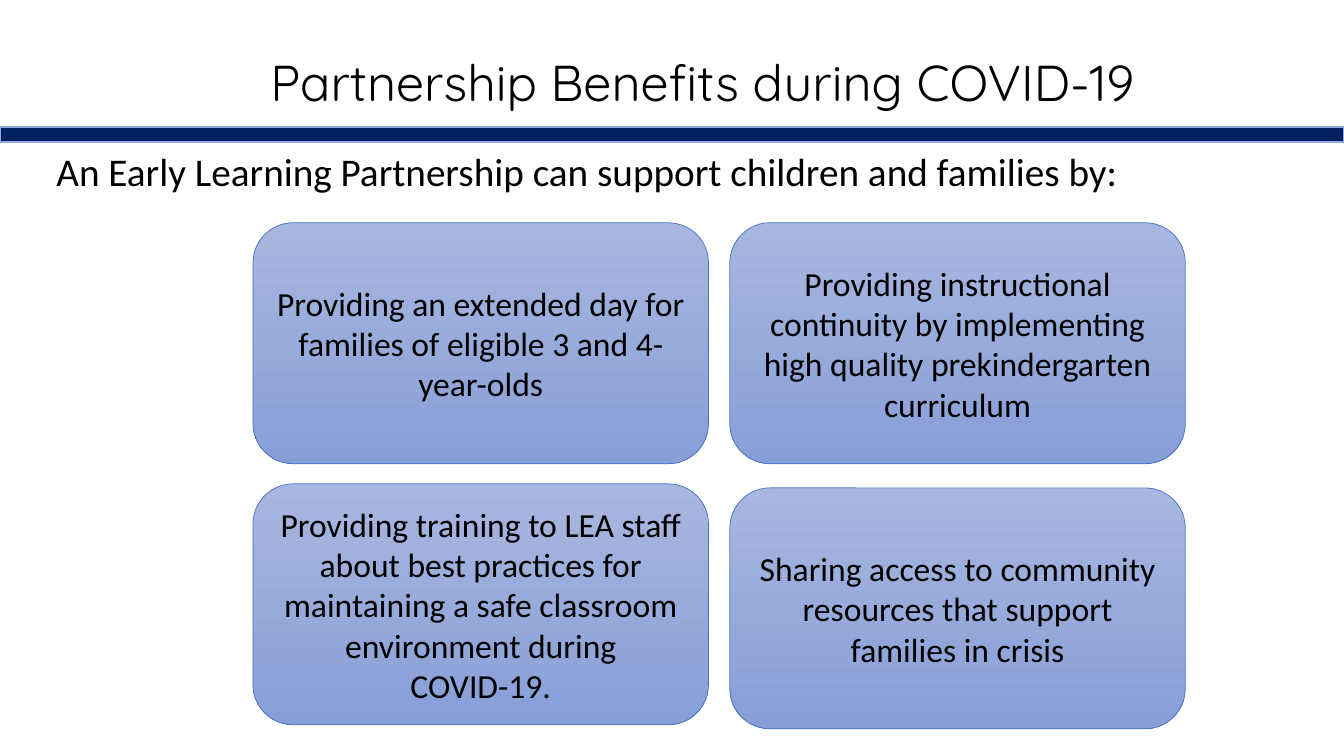
"""Build the slide on partnership benefits during COVID-19."""
import pptx
import pptx.dml.color
import pptx.enum.shapes
import pptx.enum.text
import pptx.util
from pptx.util import Pt

ALIGN = pptx.enum.text.PP_ALIGN
ANCHOR = pptx.enum.text.MSO_ANCHOR
SHAPES = pptx.enum.shapes.MSO_SHAPE


def color(hex_string):
    return pptx.dml.color.RGBColor.from_string(hex_string)


def write(shape, text, font_name, size, alignment, anchor):
    frame = shape.text_frame
    frame.word_wrap = True
    frame.auto_size = pptx.enum.text.MSO_AUTO_SIZE.NONE
    frame.vertical_anchor = anchor
    paragraph = frame.paragraphs[0]
    paragraph.text = text
    paragraph.alignment = alignment
    paragraph.font.name = font_name
    paragraph.font.size = Pt(size)
    paragraph.font.color.rgb = color("000000")
    return paragraph


presentation = pptx.Presentation()
presentation.slide_width = Pt(960)
presentation.slide_height = Pt(540)
slide = presentation.slides.add_slide(presentation.slide_layouts[1])

title = slide.shapes.title
title.left, title.top, title.width, title.height = Pt(87.8), Pt(8.6), Pt(828), Pt(104.4)
paragraph = write(title, "Partnership Benefits during COVID-19", "Quicksand", 36,
                  ALIGN.CENTER, ANCHOR.MIDDLE)
paragraph.line_spacing = 0.9

body = slide.placeholders[1]
body.left, body.top, body.width, body.height = Pt(33.1), Pt(105.1), Pt(838.8), Pt(56.2)
paragraph = write(body, "An Early Learning Partnership can support children and families by:",
                  "Calibri", 28, ALIGN.LEFT, ANCHOR.TOP)
paragraph.line_spacing = 0.9
paragraph.space_before = Pt(10)
properties = paragraph._p.get_or_add_pPr()
properties.set("marL", "0")
properties.set("indent", "0")
properties.append(pptx.oxml.parse_xml(
    '<a:buNone xmlns:a="http://schemas.openxmlformats.org/drawingml/2006/main"/>'))

band = slide.shapes.add_shape(SHAPES.RECTANGLE, Pt(0), Pt(90.7), Pt(960), Pt(10.8))
band.shadow.inherit = False
band.fill.solid()
band.fill.fore_color.rgb = color("002060")
band.line.color.rgb = color("8FAADC")
band.line.width = Pt(1)

left_column, right_column = 180.7, 521.3
benefits = [
    (left_column, 159.1, "Providing an extended day for families of eligible 3 and 4-year-olds"),
    (right_column, 159.1, "Providing instructional continuity by implementing high quality "
                          "prekindergarten curriculum"),
    (left_column, 345.6, "Providing training to LEA staff about best practices for maintaining "
                         "a safe classroom environment during COVID-19."),
    (right_column, 348.5, "Sharing access to community resources that support families in crisis"),
]
for left, top, text in benefits:
    card = slide.shapes.add_shape(SHAPES.ROUNDED_RECTANGLE,
                                  Pt(left), Pt(top), Pt(325.4), Pt(172.1))
    card.shadow.inherit = False
    card.fill.gradient()
    card.fill.gradient_angle = 270
    for stop, shade in zip(card.fill.gradient_stops, ("A8B7DF", "889ED7")):
        stop.color.rgb = color(shade)
    card.line.color.rgb = color("4472C4")
    card.line.width = Pt(0.5)
    write(card, text, "Calibri", 24, ALIGN.CENTER, ANCHOR.MIDDLE)

presentation.save("out.pptx")
